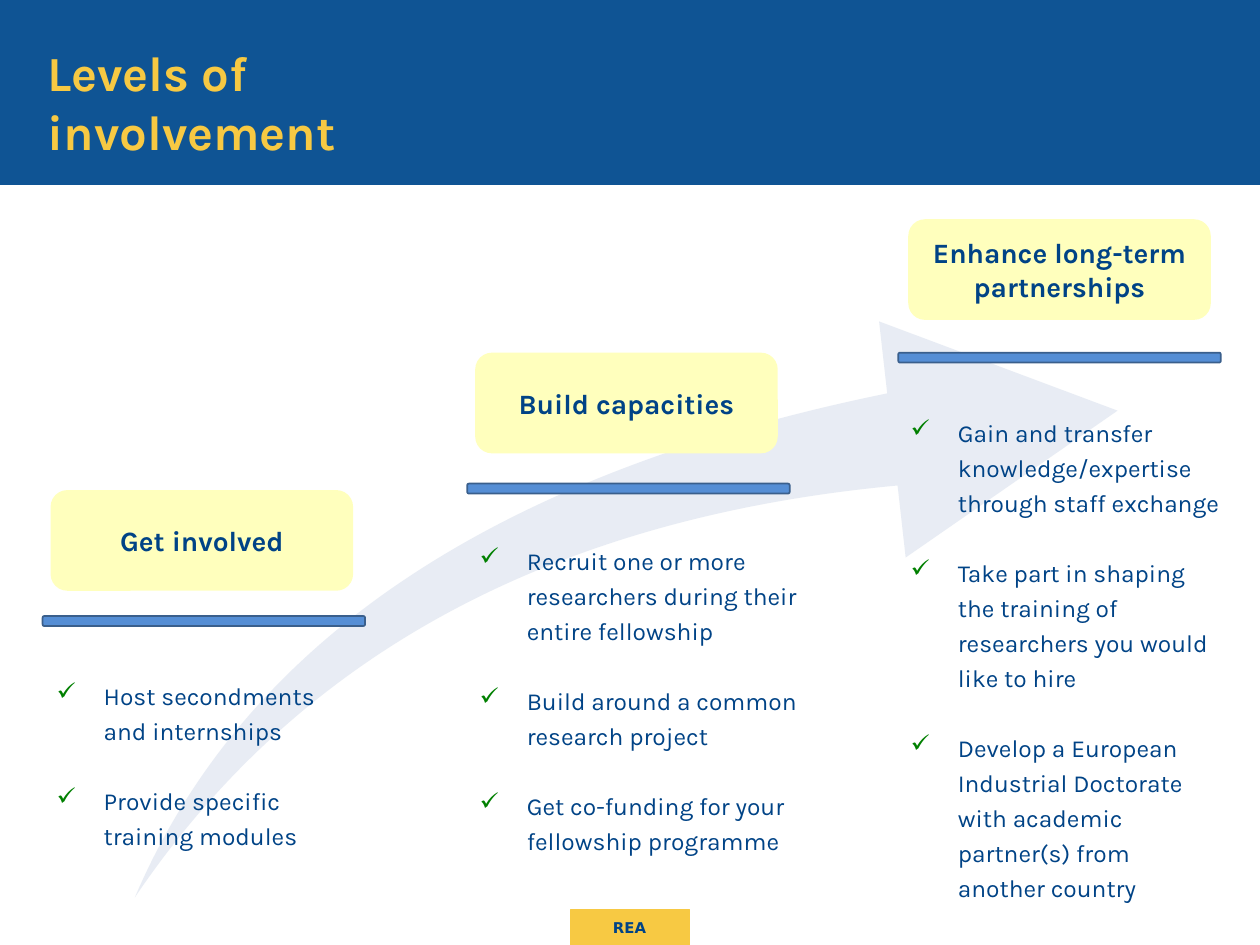
from dataclasses import dataclass

import pptx
import pptx.dml.color
import pptx.enum.shapes
import pptx.enum.text
import pptx.oxml.ns
import pptx.util
from lxml import etree
from pptx.dml.color import RGBColor
from pptx.util import Cm

BLUE = RGBColor(0x0F, 0x54, 0x94)
NAVY = RGBColor(0x00, 0x43, 0x86)
GOLD = RGBColor(0xF7, 0xC9, 0x43)
CREAM = RGBColor(0xFF, 0xFF, 0xBD)
MIST = RGBColor(0xD0, 0xD8, 0xE8)
SKY = RGBColor(0x55, 0x8E, 0xD5)
STEEL = RGBColor(0x3A, 0x5F, 0x8C)
GREEN = RGBColor(0x00, 0x80, 0x00)

KIND = pptx.enum.shapes.MSO_SHAPE
ALIGN = pptx.enum.text.PP_ALIGN
MIDDLE = pptx.enum.text.MSO_ANCHOR.MIDDLE
GROW = pptx.enum.text.MSO_AUTO_SIZE.SHAPE_TO_FIT_TEXT


@dataclass
class Box:
    """A place on the slide, in centimetres."""
    left: float
    top: float
    width: float
    height: float

    def place(self) -> list[int]:
        return [Cm(n) for n in (self.left, self.top, self.width, self.height)]


@dataclass
class Level:
    title: str
    card: Box
    bar: Box
    list: Box
    items: list[str]


LEVELS = [
    Level("Get involved", Box(1.02, 9.88, 6.1, 2.03), Box(0.86, 12.42, 6.5, 0.2),
          Box(0.89, 13.49, 6.5, 3.81),
          ["Host secondments and internships",
           "Provide specific training modules"]),
    Level("Build capacities", Box(9.58, 7.11, 6.1, 2.03), Box(9.42, 9.75, 6.5, 0.2),
          Box(9.42, 10.77, 7.29, 7.39),
          ["Recruit one or more researchers during their entire fellowship",
           "Build around a common research project",
           "Get co-funding for your fellowship programme"]),
    Level("Enhance long-term partnerships", Box(18.31, 4.42, 6.1, 2.03),
          Box(18.11, 7.11, 6.5, 0.2), Box(18.11, 8.18, 6.78, 9.53),
          ["Gain and transfer knowledge/expertise through staff exchange",
           "Take part in shaping the training of researchers you would like to hire",
           "Develop a European Industrial Doctorate with academic partner(s) "
           "from another country"]),
]


def add_form(slide, kind, box: Box, fill: RGBColor, line: RGBColor | None = None,
             width: float = 1):
    form = slide.shapes.add_shape(kind, *box.place())
    form.shadow.inherit = False
    form.fill.solid()
    form.fill.fore_color.rgb = fill
    if line is None:
        form.line.fill.background()
    else:
        form.line.color.rgb = line
        form.line.width = pptx.util.Pt(width)
    return form


def add_text(slide, box: Box):
    form = slide.shapes.add_textbox(*box.place())
    form.text_frame.word_wrap = True
    return form.text_frame


def style(para, size: float, color: RGBColor, bold: bool = False,
          face: str = "Karla") -> None:
    for run in para.runs:
        run.font.size = pptx.util.Pt(size)
        run.font.name = face
        run.font.bold = bold
        run.font.color.rgb = color


def add_tick(para) -> None:
    """Give the paragraph a green tick as its bullet, with a hanging indent."""
    name = pptx.oxml.ns.qn
    props = para._p.get_or_add_pPr()
    props.set("marL", str(Cm(0.95)))
    props.set("indent", str(Cm(-0.95)))
    tint = etree.SubElement(props, name("a:buClr"))
    etree.SubElement(tint, name("a:srgbClr"), val=str(GREEN))
    etree.SubElement(props, name("a:buChar"), char="✓")


def add_list(slide, box: Box, items: list[str]) -> None:
    frame = add_text(slide, box)
    frame.auto_size = GROW
    frame.text = "\n".join(items)
    for i, para in enumerate(frame.paragraphs):
        add_tick(para)
        para.line_spacing = pptx.util.Pt(20)
        if i:
            para.space_before = pptx.util.Pt(20)
        style(para, 14, NAVY)


def add_card(slide, box: Box, title: str) -> None:
    frame = add_form(slide, KIND.ROUNDED_RECTANGLE, box, CREAM).text_frame
    frame.word_wrap = True
    frame.vertical_anchor = MIDDLE
    frame.text = title
    frame.paragraphs[0].alignment = ALIGN.CENTER
    style(frame.paragraphs[0], 16, NAVY, True)


def add_swoosh(slide) -> None:
    arrow = add_form(slide, KIND.SWOOSH_ARROW, Box(2.72, 6.48, 19.81, 11.61), MIST)
    arrow.adjustments[0] = 0.16
    arrow.adjustments[1] = 0.4
    tint = arrow._element.spPr.find(".//" + pptx.oxml.ns.qn("a:srgbClr"))
    etree.SubElement(tint, pptx.oxml.ns.qn("a:alpha"), val="47000")


def add_badge(slide) -> None:
    frame = add_text(slide, Box(11.46, 18.29, 2.46, 0.81))
    frame.vertical_anchor = MIDDLE
    frame.text = "REA"
    frame.paragraphs[0].alignment = ALIGN.CENTER
    style(frame.paragraphs[0], 8.5, NAVY, True, "DejaVu Sans")


def add_title(slide) -> None:
    frame = add_text(slide, Box(0.71, 0.74, 9.19, 2.64))
    frame.auto_size = GROW
    frame.text = "Levels of involvement"
    style(frame.paragraphs[0], 28, GOLD, True)


def main() -> None:
    deck = pptx.Presentation()
    deck.slide_width, deck.slide_height = Cm(25.4), Cm(19.05)
    slide = deck.slides.add_slide(deck.slide_layouts[6])
    add_form(slide, KIND.RECTANGLE, Box(11.51, 18.34, 2.39, 0.71), GOLD, GOLD, 0.75)
    add_form(slide, KIND.RECTANGLE, Box(0, 0, 25.4, 3.73), BLUE)
    add_swoosh(slide)
    add_badge(slide)
    for level in LEVELS:
        add_form(slide, KIND.ROUNDED_RECTANGLE, level.bar, SKY, STEEL)
        add_card(slide, level.card, level.title)
        add_list(slide, level.list, level.items)
    add_title(slide)
    deck.save("out.pptx")


if __name__ == "__main__":
    main()
